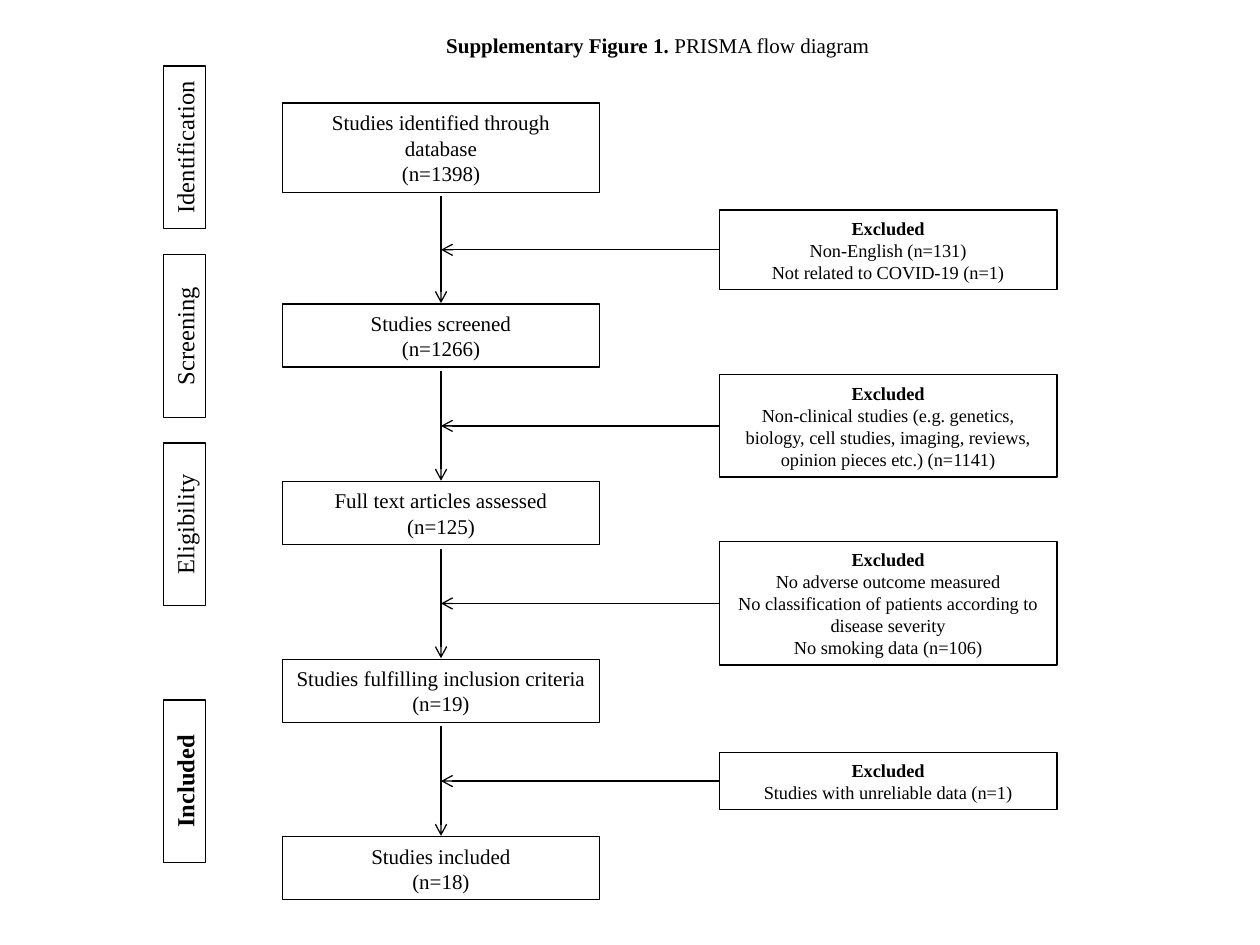
from dataclasses import dataclass

from lxml import etree
from pptx import Presentation
from pptx.dml.color import RGBColor
from pptx.enum import shapes, text
from pptx.oxml.ns import qn
from pptx.util import Cm, Pt


@dataclass(frozen=True)
class Theme:
    font: str = "Times New Roman"
    ink: RGBColor = RGBColor(0, 0, 0)
    line: float = 0.75
    main: float = 12
    note: float = 10.5
    label: float = 14


THEME = Theme()

# Each line of text is a list of (words, bold) spans.
TITLE = [[("Supplementary Figure 1.", True), (" PRISMA flow diagram", False)]]
STAGES = [
    ("Studies identified through database", "(n=1398)"),
    ("Studies screened", "(n=1266)"),
    ("Full text articles assessed", "(n=125)"),
    ("Studies fulfilling inclusion criteria", "(n=19)"),
    ("Studies included", "(n=18)"),
]
# Box height in cm, then the reasons for exclusion.
EXCLUSIONS = [
    (1.6, ["Non-English (n=131)", "Not related to COVID-19 (n=1)"]),
    (2.06, ["Non-clinical studies (e.g. genetics, biology, cell studies, "
            "imaging, reviews, opinion pieces etc.) (n=1141)"]),
    (2.49, ["No adverse outcome measured",
            "No classification of patients according to disease severity",
            "No smoking data (n=106)"]),
    (1.14, ["Studies with unreliable data (n=1)"]),
]
# Phase name, centre height in cm, bold.
PHASES = [
    ("Identification", 2.97, False),
    ("Screening", 6.77, False),
    ("Eligibility", 10.57, False),
    ("Included", 15.75, True),
]

# Layout in cm.
STAGE_LEFT, STAGE_WIDTH = 5.69, 6.4
FIRST_TOP, FIRST_HEIGHT = 2.08, 1.8
SECOND_TOP, STAGE_HEIGHT, STAGE_STEP = 6.13, 1.27, 3.58
NOTE_LEFT, NOTE_WIDTH = 14.5, 6.81
PHASE_CENTRE, PHASE_WIDTH, PHASE_HEIGHT = 3.72, 3.28, 0.86
ARROW_START_GAP, ARROW_END_GAP = 0.08, 0.02


def write(frame, lines, size):
    """Fill a frame with one centred paragraph of lines."""
    frame.word_wrap = True
    para = frame.paragraphs[0]
    para.alignment = text.PP_ALIGN.CENTER
    for index, line in enumerate(lines):
        if index:
            para.add_line_break()
        for words, bold in line:
            span = para.add_run()
            span.text = words
            span.font.name = THEME.font
            span.font.size = Pt(size)
            span.font.bold = bold
            span.font.color.rgb = THEME.ink


def add_box(page, left, top, width, height, lines, size):
    box = page.shapes.add_shape(shapes.MSO_SHAPE.RECTANGLE, Cm(left), Cm(top),
                                Cm(width), Cm(height))
    box.shadow.inherit = False
    box.fill.background()
    box.line.color.rgb = THEME.ink
    box.line.width = Pt(THEME.line)
    box.text_frame.vertical_anchor = text.MSO_ANCHOR.MIDDLE
    write(box.text_frame, lines, size)
    return box


def add_arrow(page, x1, y1, x2, y2):
    arrow = page.shapes.add_connector(shapes.MSO_CONNECTOR.STRAIGHT,
                                      Cm(x1), Cm(y1), Cm(x2), Cm(y2))
    arrow.line.color.rgb = THEME.ink
    arrow.line.width = Pt(THEME.line)
    etree.SubElement(arrow.line._get_or_add_ln(), qn("a:tailEnd"), type="arrow")
    etree.SubElement(arrow._element.spPr, qn("a:effectLst"))


def add_title(page):
    title = page.shapes.title
    title.left, title.top = Cm(2.26), Cm(0.53)
    title.width, title.height = Cm(22), Cm(0.77)
    write(title.text_frame, TITLE, THEME.main)


def add_flow(page):
    rows = [(FIRST_TOP, FIRST_HEIGHT)]
    rows += [(SECOND_TOP + STAGE_STEP * index, STAGE_HEIGHT)
             for index in range(len(STAGES) - 1)]
    for (top, height), stage in zip(rows, STAGES):
        add_box(page, STAGE_LEFT, top, STAGE_WIDTH, height,
                [[(line, False)] for line in stage], THEME.main)

    centre = STAGE_LEFT + STAGE_WIDTH / 2
    for (top, height), (next_top, _), (note_height, reasons) in zip(
            rows, rows[1:], EXCLUSIONS):
        start = top + height + ARROW_START_GAP
        end = next_top - ARROW_END_GAP
        middle = (start + end) / 2
        add_arrow(page, centre, start, centre, end)
        add_arrow(page, NOTE_LEFT, middle, centre, middle)
        lines = [[("Excluded", True)]] + [[(reason, False)] for reason in reasons]
        add_box(page, NOTE_LEFT, middle - note_height / 2, NOTE_WIDTH,
                note_height, lines, THEME.note)


def add_phases(page):
    for name, middle, bold in PHASES:
        box = add_box(page, PHASE_CENTRE - PHASE_WIDTH / 2,
                      middle - PHASE_HEIGHT / 2, PHASE_WIDTH, PHASE_HEIGHT,
                      [[(name, bold)]], THEME.label)
        box.rotation = 270


def main():
    deck = Presentation()
    deck.slide_width, deck.slide_height = Cm(25.4), Cm(19.05)
    page = deck.slides.add_slide(deck.slide_layouts.get_by_name("Title Only"))
    add_title(page)
    add_flow(page)
    add_phases(page)
    deck.save("out.pptx")


if __name__ == "__main__":
    main()
